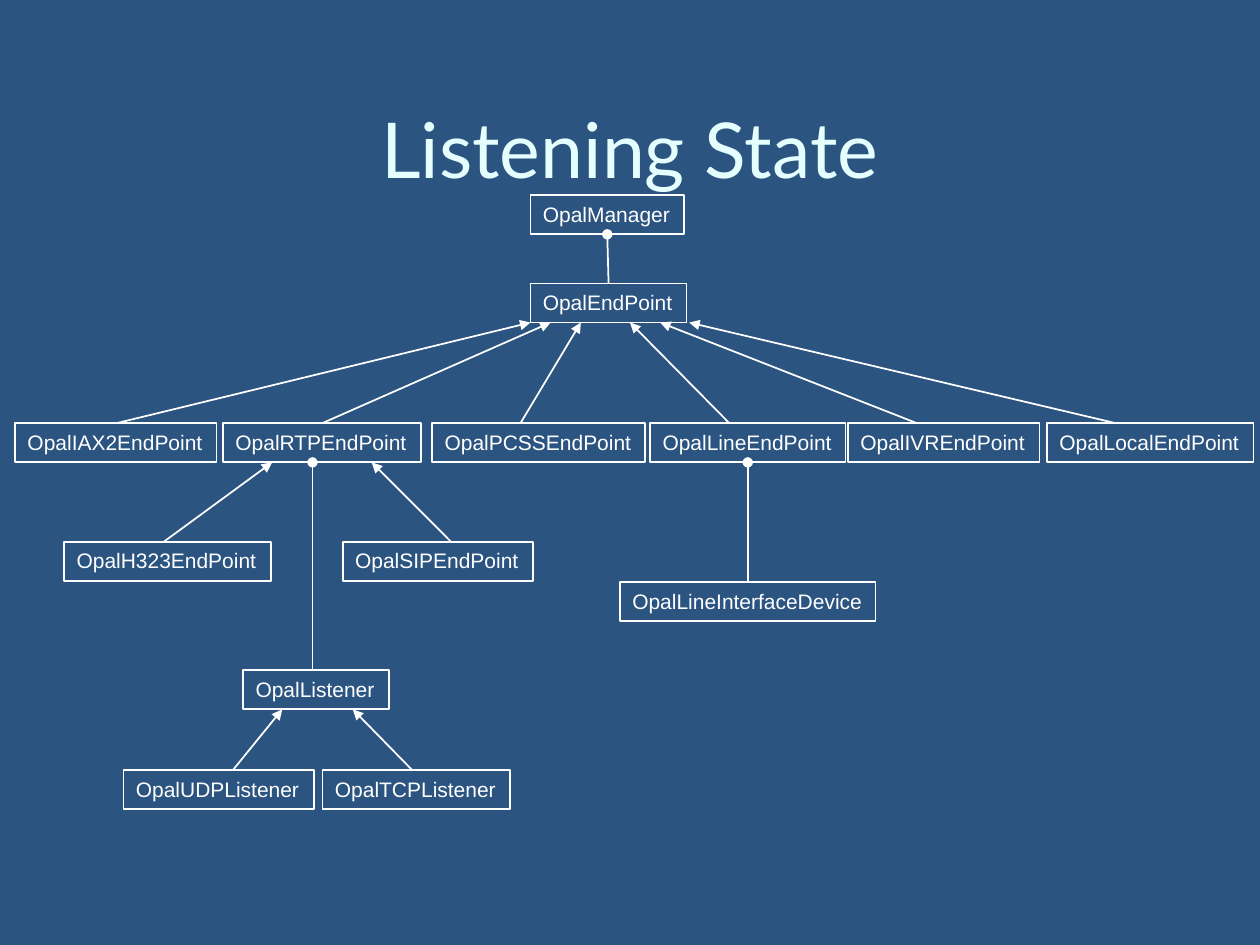
from lxml import etree
from pptx import Presentation
from pptx.dml.color import RGBColor
from pptx.enum.shapes import MSO_CONNECTOR as CONN, MSO_SHAPE as SHAPE
from pptx.enum.text import MSO_ANCHOR as ANCHOR, MSO_AUTO_SIZE as AUTO, PP_ALIGN as ALIGN
from pptx.oxml.ns import qn
from pptx.util import Inches, Pt

BACKGROUND, TITLE, WHITE = "2B5481", "E5FFFF", "FFFFFF"
BOX_HEIGHT = 0.31
JOIN_TOLERANCE = 0.025
TOP, BOTTOM = 0, 2

ROWS = [
    (0, [("OpalManager", 4.09, 1.22)]),
    (0.7, [("OpalEndPoint", 4.09, 1.24)]),
    (1.81, [("OpalIAX2EndPoint", 0, 1.6), ("OpalRTPEndPoint", 1.65, 1.57),
            ("OpalPCSSEndPoint", 3.31, 1.69), ("OpalLineEndPoint", 5.04, 1.55),
            ("OpalIVREndPoint", 6.61, 1.52), ("OpalLocalEndPoint", 8.19, 1.64)]),
    (2.75, [("OpalH323EndPoint", 0.39, 1.64), ("OpalSIPEndPoint", 2.6, 1.51)]),
    (3.07, [("OpalLineInterfaceDevice", 4.8, 2.03)]),
    (3.77, [("OpalListener", 1.81, 1.16)]),
    (4.56, [("OpalUDPListener", 0.86, 1.51), ("OpalTCPListener", 2.44, 1.49)]),
]

INHERITS = [
    ("OpalIAX2EndPoint", 0.78, "OpalEndPoint", 4.09),
    ("OpalRTPEndPoint", 2.44, "OpalEndPoint", 4.25),
    ("OpalPCSSEndPoint", 4.01, "OpalEndPoint", 4.49),
    ("OpalLineEndPoint", 5.67, "OpalEndPoint", 4.88),
    ("OpalIVREndPoint", 7.16, "OpalEndPoint", 5.12),
    ("OpalLocalEndPoint", 8.74, "OpalEndPoint", 5.35),
    ("OpalH323EndPoint", 1.18, "OpalRTPEndPoint", 2.04),
    ("OpalSIPEndPoint", 3.46, "OpalRTPEndPoint", 2.83),
    ("OpalUDPListener", 1.73, "OpalListener", 2.12),
    ("OpalTCPListener", 3.15, "OpalListener", 2.68),
]

BELONGS = [
    ("OpalEndPoint", 4.72, "OpalManager", 4.72),
    ("OpalListener", 2.36, "OpalRTPEndPoint", 2.36),
    ("OpalLineInterfaceDevice", 5.82, "OpalLineEndPoint", 5.82),
]


def color(value):
    """Return the colour for a hex string."""
    return RGBColor.from_string(value)


def set_font(p, name, size, value):
    """Format every run of a paragraph."""
    for r in p.runs:
        r.font.name, r.font.size = name, Pt(size)
        r.font.color.rgb = color(value)


def add_title(slide, text, left, top, width, height):
    """Place and format the slide title."""
    sp = slide.shapes.title
    sp.left, sp.top = Inches(left), Inches(top)
    sp.width, sp.height = Inches(width), Inches(height)
    tf = sp.text_frame
    tf.text = text
    tf.vertical_anchor = ANCHOR.MIDDLE
    p = tf.paragraphs[0]
    p.alignment = ALIGN.CENTER
    set_font(p, "Lato", 44, TITLE)


def add_class(slide, name, left, top, width):
    """Draw one outlined class box."""
    sp = slide.shapes.add_shape(SHAPE.RECTANGLE, Inches(left), Inches(top),
                                Inches(width), Inches(BOX_HEIGHT))
    sp.shadow.inherit = False
    sp.fill.background()
    sp.line.color.rgb = color(WHITE)
    sp.line.width = Pt(1)
    tf = sp.text_frame
    tf.text = name
    tf.word_wrap = False
    tf.auto_size = AUTO.SHAPE_TO_FIT_TEXT
    tf.vertical_anchor = ANCHOR.TOP
    p = tf.paragraphs[0]
    p.alignment = ALIGN.LEFT
    set_font(p, "Arial", 12, WHITE)
    return sp


def is_middle(sp, x):
    """Tell whether x lies at the middle of a box."""
    return abs(sp.left + sp.width / 2 - x) <= Inches(JOIN_TOLERANCE)


def add_link(slide, child, child_x, parent, parent_x, end):
    """Draw a line from the top of a child to the bottom of its parent."""
    line = slide.shapes.add_connector(CONN.STRAIGHT, child_x, child.top,
                                      parent_x, parent.top + parent.height)
    if is_middle(child, child_x):
        line.begin_connect(child, TOP)
    if is_middle(parent, parent_x):
        line.end_connect(parent, BOTTOM)
    line.line.color.rgb = color(WHITE)
    line.line.width = Pt(1)
    ln = line.line._get_or_add_ln()
    etree.SubElement(ln, qn("a:tailEnd"), type=end, w="med", len="med")
    etree.SubElement(line._element.spPr, qn("a:effectLst"))


def add_class_tree(slide, left, top):
    """Draw the class boxes and their relations from the given corner."""
    boxes = {name: add_class(slide, name, left + x, top + y, width)
             for y, row in ROWS for name, x, width in row}
    for links, end in ((INHERITS, "triangle"), (BELONGS, "oval")):
        for child, child_x, parent, parent_x in links:
            add_link(slide, boxes[child], Inches(left + child_x),
                     boxes[parent], Inches(left + parent_x), end)


def main():
    """Build and save the slide."""
    prs = Presentation()
    prs.slide_width, prs.slide_height = Inches(10), Inches(7.5)
    slide = prs.slides.add_slide(prs.slide_layouts[5])
    fill = slide.background.fill
    fill.solid()
    fill.fore_color.rgb = color(BACKGROUND)
    add_title(slide, "Listening State", 0.5, 0.42, 9, 1.5)
    add_class_tree(slide, 0.12, 1.55)
    prs.save("out.pptx")


if __name__ == "__main__":
    main()
